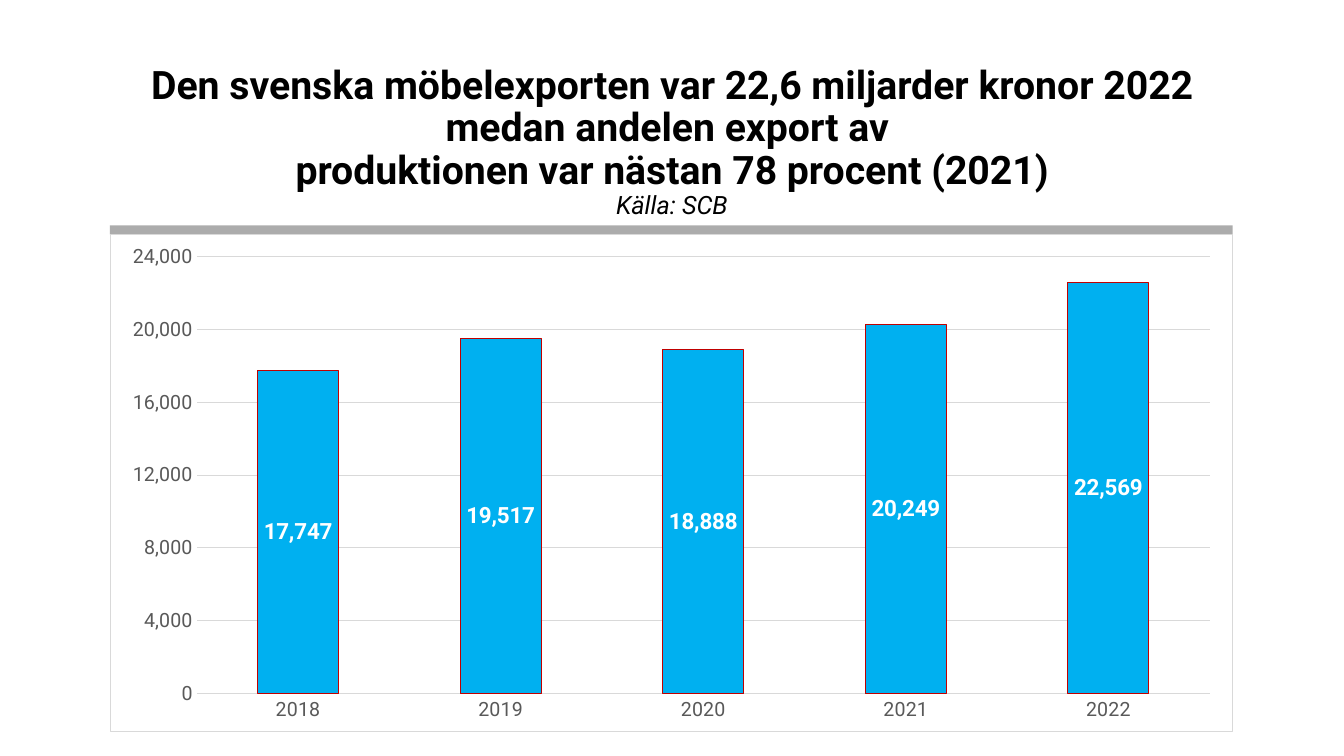
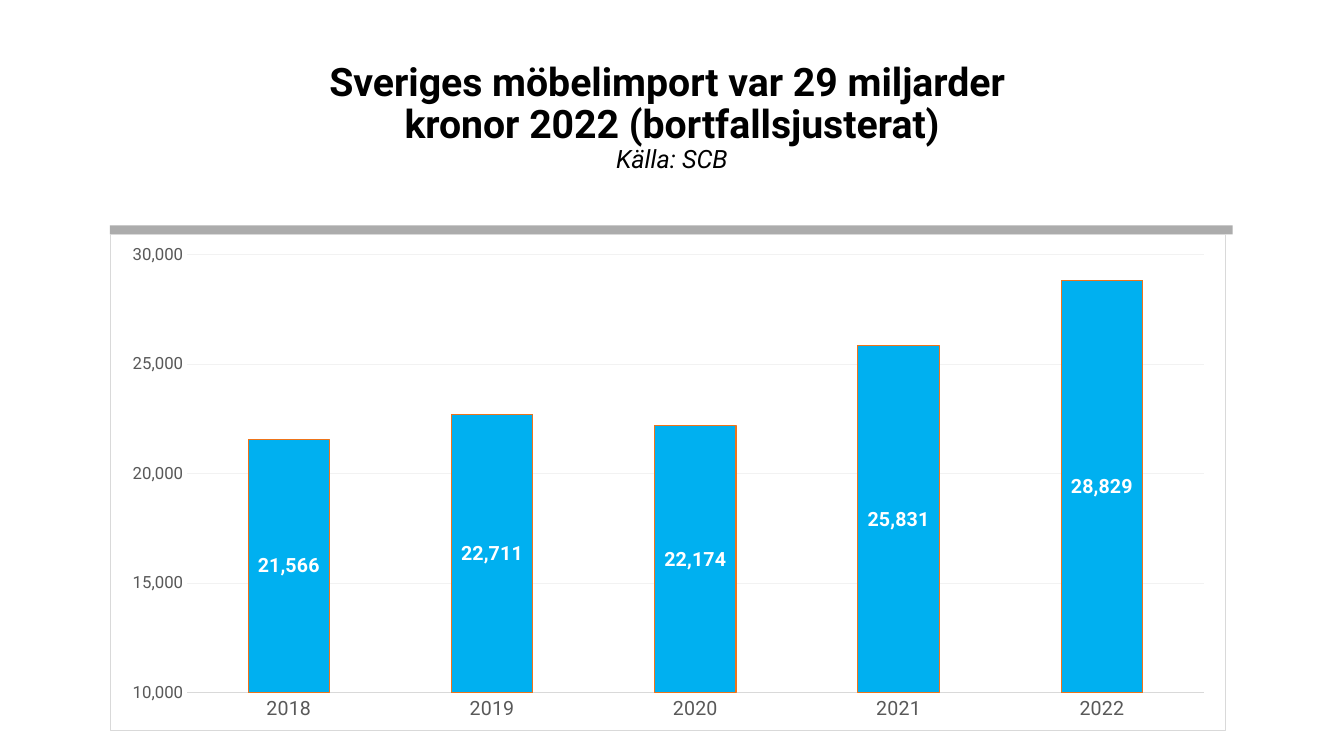
from pptx import Presentation
from pptx.chart.data import CategoryChartData
from pptx.dml.color import RGBColor
from pptx.enum.chart import XL_CHART_TYPE, XL_LABEL_POSITION, XL_TICK_MARK
from pptx.enum.shapes import MSO_SHAPE
from pptx.enum.text import MSO_ANCHOR, MSO_AUTO_SIZE, PP_ALIGN
from pptx.oxml import parse_xml
from pptx.oxml.ns import nsdecls, qn
from pptx.util import Pt

COLUMNS = XL_CHART_TYPE.COLUMN_CLUSTERED
LABEL_CENTER = XL_LABEL_POSITION.CENTER
NO_TICK = XL_TICK_MARK.NONE
RECTANGLE = MSO_SHAPE.RECTANGLE
MIDDLE = MSO_ANCHOR.MIDDLE
CENTER = PP_ALIGN.CENTER
NO_AUTOFIT = MSO_AUTO_SIZE.NONE

FONT = "Roboto"
BLACK = RGBColor(0x00, 0x00, 0x00)
WHITE = RGBColor(0xFF, 0xFF, 0xFF)
BAND_GRAY = RGBColor(0x80, 0x80, 0x80)
AXIS_TEXT = RGBColor(0x59, 0x59, 0x59)
RULE_GRAY = RGBColor(0xD9, 0xD9, 0xD9)
PALE_GRAY = RGBColor(0xF2, 0xF2, 0xF2)
COLUMN_BLUE = RGBColor(0x00, 0xB0, 0xF0)
EDGE_RED = RGBColor(0xC0, 0x00, 0x00)
EDGE_ORANGE = RGBColor(0xEE, 0x74, 0x1A)

LEFT = 78.5
YEARS = ["2018", "2019", "2020", "2021", "2022"]
SOURCE = "Källa: SCB"

SLIDES = [
    {
        "title": "Den svenska möbelexporten var 22,6 miljarder kronor 2022 "
                 "medan andelen export av \vproduktionen var nästan 78 procent (2021)",
        "title_top": 49.7,
        "values": [17747, 19517, 18888, 20249, 22569],
        "scale": (0, 24000, 4000),
        "chart_size": (802, 355.7),
        "value_size": 14,
        "label_size": 16,
        "grid": RULE_GRAY,
        "edge": EDGE_RED,
    },
    {
        "title": "Sveriges möbelimport var 29 miljarder \vkronor 2022 (bortfallsjusterat)",
        "title_top": 32.4,
        "values": [21566, 22711, 22174, 25831, 28829],
        "scale": (10000, 30000, 5000),
        "chart_size": (797.5, 355),
        "value_size": 12,
        "label_size": 14,
        "grid": PALE_GRAY,
        "edge": EDGE_ORANGE,
    },
]


def style_font(font, size, color, bold=False):
    font.name = FONT
    font.size = Pt(size)
    font.color.rgb = color
    font.bold = bold


def style_line(line, color):
    line.color.rgb = color
    line.width = Pt(0.75)


deck = Presentation()
deck.slide_width = Pt(960)
deck.slide_height = Pt(540)

title_style = deck.slide_master.element.find(".//" + qn("p:titleStyle"))
title_defaults = title_style.find(".//" + qn("a:defRPr"))
title_defaults.set("sz", "2800")
title_defaults.set("b", "1")
title_defaults.find(qn("a:latin")).set("typeface", FONT)

for content in SLIDES:
    page = deck.slides.add_slide(deck.slide_layouts[5])

    title = page.shapes.title
    title.left, title.top = Pt(68.5), Pt(content["title_top"])
    title.width, title.height = Pt(823), Pt(104.4)
    frame = title.text_frame
    frame.text = content["title"] + "\v" + SOURCE
    frame.word_wrap = True
    frame.auto_size = NO_AUTOFIT
    frame.vertical_anchor = MIDDLE
    para = frame.paragraphs[0]
    para.alignment = CENTER
    para.line_spacing = 0.9
    for span in para.runs:
        style_font(span.font, 28, BLACK, bold=True)
    source_span = para.runs[-1]
    style_font(source_span.font, 18, BLACK)
    source_span.font.italic = True

    band = page.shapes.add_shape(RECTANGLE, Pt(LEFT), Pt(161), Pt(802), Pt(6.5))
    band.shadow.inherit = False
    band.fill.solid()
    band.fill.fore_color.rgb = BAND_GRAY
    band.line.fill.background()
    band_color = band.element.spPr.find(qn("a:solidFill")).find(qn("a:srgbClr"))
    band_color.append(parse_xml(f'<a:alpha {nsdecls("a")} val="65000"/>'))

    chart_data = CategoryChartData(number_format="#,##0")
    chart_data.categories = YEARS
    chart_data.add_series("Series 1", content["values"])
    chart_width, chart_height = content["chart_size"]
    chart = page.shapes.add_chart(
        COLUMNS, Pt(LEFT), Pt(167.3), Pt(chart_width), Pt(chart_height), chart_data
    ).chart
    chart.has_title = False
    chart.has_legend = False
    style_font(chart.font, 9, BLACK)
    chart.element.find(qn("c:chart")).addnext(parse_xml(
        f'<c:spPr {nsdecls("c", "a")}>'
        f'<a:solidFill><a:srgbClr val="{WHITE}"/></a:solidFill>'
        f'<a:ln w="9525"><a:solidFill><a:srgbClr val="{RULE_GRAY}"/></a:solidFill></a:ln>'
        '</c:spPr>'
    ))

    year_axis = chart.category_axis
    value_axis = chart.value_axis
    for axis, size in ((year_axis, 14), (value_axis, content["value_size"])):
        axis.major_tick_mark = NO_TICK
        axis.minor_tick_mark = NO_TICK
        style_font(axis.tick_labels.font, size, AXIS_TEXT)
    style_line(year_axis.format.line, RULE_GRAY)
    value_axis.format.line.fill.background()
    value_axis.minimum_scale, value_axis.maximum_scale, value_axis.major_unit = content["scale"]
    value_axis.tick_labels.number_format = "#,##0"
    value_axis.tick_labels.number_format_is_linked = False
    value_axis.has_major_gridlines = True
    style_line(value_axis.major_gridlines.format.line, content["grid"])

    plot = chart.plots[0]
    plot.gap_width = 150
    plot.vary_by_categories = False
    series = plot.series[0]
    series.format.fill.solid()
    series.format.fill.fore_color.rgb = COLUMN_BLUE
    style_line(series.format.line, content["edge"])
    labels = series.data_labels
    labels.show_value = True
    labels.position = LABEL_CENTER
    labels.number_format = "#,##0"
    labels.number_format_is_linked = False
    style_font(labels.font, content["label_size"], WHITE, bold=True)

deck.save("out.pptx")
